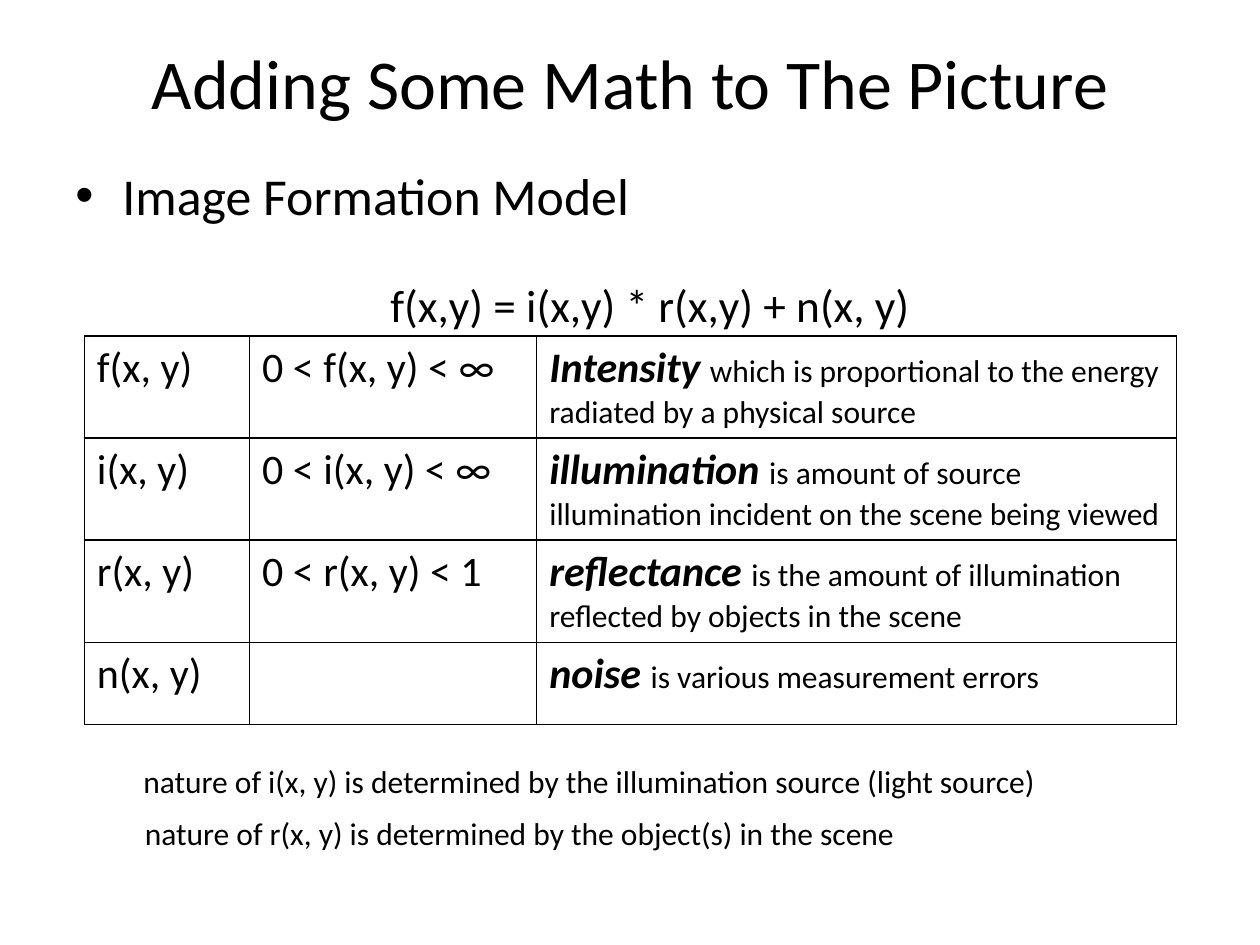
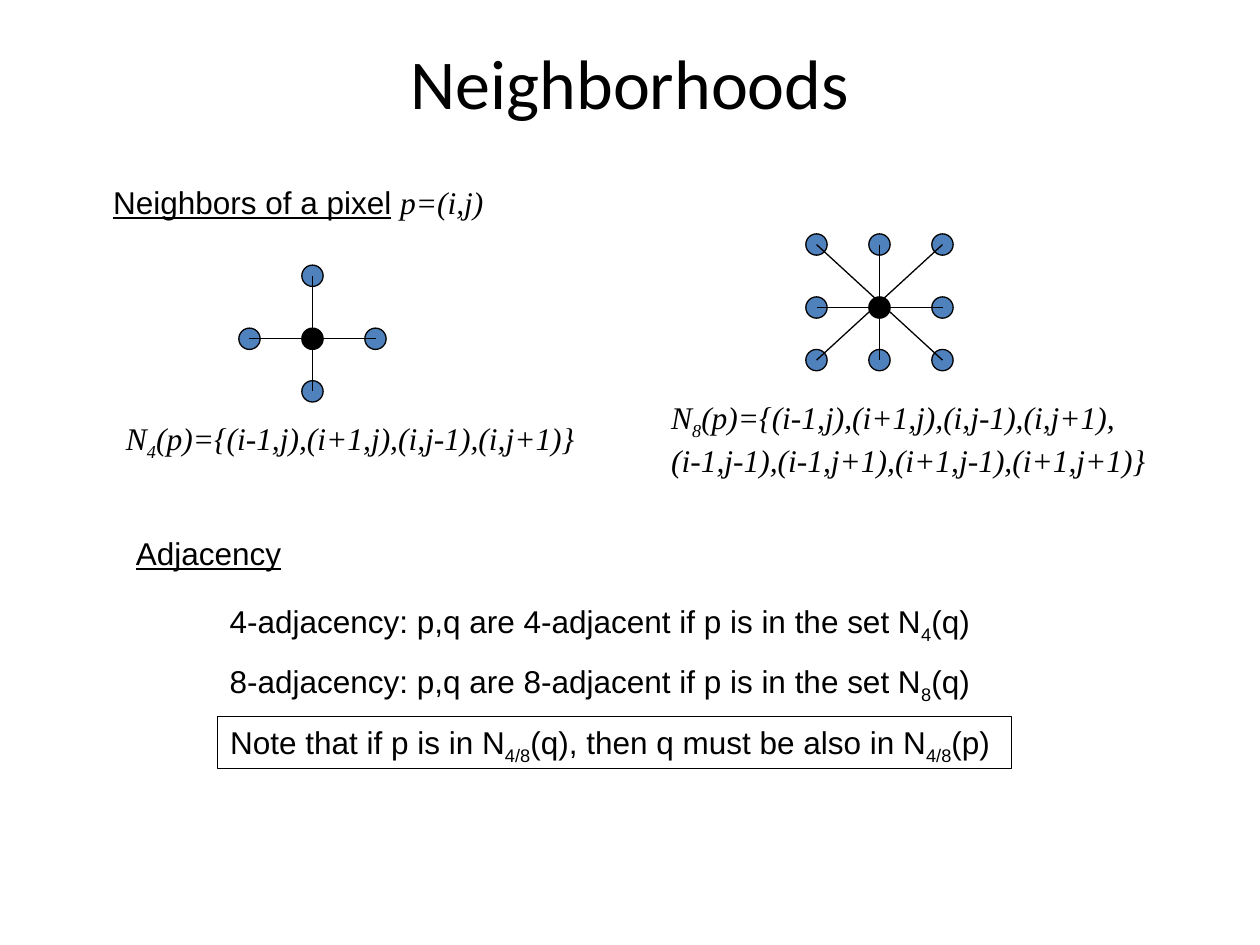
from dataclasses import dataclass

from lxml import etree
from pptx import Presentation
from pptx.dml.color import RGBColor
from pptx.enum.shapes import MSO_CONNECTOR, MSO_SHAPE
from pptx.enum.text import MSO_ANCHOR, MSO_AUTO_SIZE, PP_ALIGN
from pptx.oxml.ns import qn
from pptx.util import Cm, Pt

CENTER, LEFT = PP_ALIGN.CENTER, PP_ALIGN.LEFT
MIDDLE, TOP = MSO_ANCHOR.MIDDLE, MSO_ANCHOR.TOP
GROW, FIXED = MSO_AUTO_SIZE.SHAPE_TO_FIT_TEXT, MSO_AUTO_SIZE.NONE
OVAL, RECTANGLE = MSO_SHAPE.OVAL, MSO_SHAPE.RECTANGLE
STRAIGHT = MSO_CONNECTOR.STRAIGHT


@dataclass(frozen=True)
class Theme:
    ink: str = "000000"
    node: str = "4F81BD"
    body_font: str = "Calibri"
    label_font: str = "Arial"
    math_font: str = "Times New Roman"
    title: float = 40
    bullet: float = 29.6
    formula: float = 25.9
    cell: float = 24
    text: float = 18
    line: float = 0.75
    border: float = 1


THEME = Theme()
SUB = {"sub": True}
STRONG = {"size": THEME.cell, "bold": True, "italic": True}
LABEL = {"font": THEME.label_font}
MATH = {"font": THEME.math_font, "italic": True}


# Shared helpers
def add_text(p, text, font=THEME.body_font, size=THEME.text, color=THEME.ink,
             bold=False, italic=False, underline=False, sub=False):
    r = p.add_run()
    r.text = text
    f = r.font
    f.name, f.size = font, Pt(size)
    f.bold, f.italic, f.underline = bold, italic, underline
    f.color.rgb = RGBColor.from_string(color)
    if sub:
        r._r.get_or_add_rPr().set("baseline", "-25000")


def fill_text(tf, *paragraphs, **fmt):
    """Each paragraph is a list of plain strings or (string, format) pairs."""
    for n, runs in enumerate(paragraphs):
        p = tf.add_paragraph() if n else tf.paragraphs[0]
        p.alignment = LEFT
        for run in runs:
            text, extra = (run, {}) if isinstance(run, str) else run
            add_text(p, text, **{**fmt, **extra})


def add_label(slide, box, *paragraphs, **fmt):
    tf = slide.shapes.add_textbox(*map(Cm, box)).text_frame
    tf.word_wrap, tf.auto_size = False, GROW
    fill_text(tf, *paragraphs, **fmt)


def style_line(line):
    line.color.rgb = RGBColor.from_string(THEME.ink)
    line.width = Pt(THEME.line)


def add_line(slide, start, end):
    line = slide.shapes.add_connector(STRAIGHT, *map(Cm, (*start, *end)))
    style_line(line.line)
    etree.SubElement(line._element.spPr, qn("a:effectLst"))


def add_titled_slide(prs, title):
    slide = prs.slides.add_slide(prs.slide_layouts[5])
    sp = slide.shapes.title
    sp.left, sp.top, sp.width, sp.height = map(Cm, (1.27, 0.76, 22.86, 1.78))
    tf = sp.text_frame
    tf.vertical_anchor, tf.auto_size = MIDDLE, FIXED
    fill_text(tf, [title], size=THEME.title)
    tf.paragraphs[0].alignment = CENTER
    return slide


# Image formation model
def add_model(slide, box):
    tf = slide.shapes.add_textbox(*map(Cm, box)).text_frame
    tf.word_wrap = True
    fill_text(tf, [("Image Formation Model", {"size": THEME.bullet})],
              ["f(x,y) = i(x,y) * r(x,y) + n(x, y)"], size=THEME.formula)
    heading, formula = tf.paragraphs
    pPr = heading._p.get_or_add_pPr()
    pPr.set("marL", str(Cm(0.95)))
    pPr.set("indent", str(-Cm(0.95)))
    etree.SubElement(pPr, qn("a:buFont"), typeface=THEME.label_font)
    etree.SubElement(pPr, qn("a:buChar"), char="•")
    formula.space_before = Pt(29)
    formula._p.get_or_add_pPr().set("marL", str(Cm(6.35)))


def add_borders(cell):
    tcPr = cell._tc.get_or_add_tcPr()
    for side in ("lnL", "lnR", "lnT", "lnB"):
        ln = etree.SubElement(tcPr, qn(f"a:{side}"), w=str(Pt(THEME.border)))
        fill = etree.SubElement(ln, qn("a:solidFill"))
        etree.SubElement(fill, qn("a:srgbClr"), val=THEME.ink)


def add_term_table(slide, left, top):
    rows = [
        ("f(x, y)", "0 < f(x, y) < ∞", "Intensity ",
         "which is proportional to the energy radiated by a physical source"),
        ("i(x, y)", "0 < i(x, y) < ∞", "illumination ",
         "is amount of source illumination incident on the scene being viewed"),
        ("r(x, y)", "0 < r(x, y) < 1", "reflectance ",
         "is the amount of illumination reflected by objects in the scene"),
        ("n(x, y)", "", "noise ", "is various measurement errors"),
    ]
    widths, heights = (3.33, 5.79, 12.9), (2.06, 2.06, 2.06, 1.65)
    table = slide.shapes.add_table(
        len(rows), len(widths), Cm(left), Cm(top),
        Cm(sum(widths)), Cm(sum(heights))).table
    table.first_row = table.horz_banding = False
    for column, width in zip(table.columns, widths):
        column.width = Cm(width)
    for row, height, (term, limits, name, meaning) in zip(
            table.rows, heights, rows):
        row.height = Cm(height)
        contents = ([term], [limits] if limits else [],
                    [(name, STRONG), (meaning, {"size": THEME.text})])
        for cell, runs in zip(row.cells, contents):
            fill_text(cell.text_frame, runs, size=THEME.cell)
            add_borders(cell)
            cell.fill.background()


def build_math_slide(prs):
    slide = add_titled_slide(prs, "Adding Some Math to The Picture")
    add_model(slide, (1.27, 3.18, 22.86, 3.38))
    add_term_table(slide, 1.7, 6.77)
    add_label(slide, (2.64, 15.24, 18.87, 1.02),
              ["nature of i(x, y) is determined by the illumination source (light source)"])
    add_label(slide, (2.67, 16.28, 15.98, 1.02),
              ["nature of r(x, y) is determined by the object(s) in the scene"])


# Pixel neighborhoods
def add_node(slide, x, y, color):
    size = 0.43
    sp = slide.shapes.add_shape(
        OVAL, Cm(x - size / 2), Cm(y - size / 2), Cm(size), Cm(size))
    sp.shadow.inherit = False
    sp.fill.solid()
    sp.fill.fore_color.rgb = RGBColor.from_string(color)
    style_line(sp.line)


def add_neighborhood(slide, x, y, diagonals=False):
    reach, below = 1.27, 1.06
    sides = [(-1, 0), (0, -1), (1, 0), (0, 1)]
    corners = [(-1, -1), (-1, 1), (1, -1), (1, 1)] if diagonals else []

    def spot(dx, dy):
        return x + dx * reach, y + dy * (below if dy > 0 else reach)

    add_node(slide, x, y, THEME.ink)
    for step in sides + corners:
        add_node(slide, *spot(*step), THEME.node)
    for dx, dy in sides:
        end_x, end_y = spot(dx, dy)
        add_line(slide, (end_x - dx * reach, end_y - dy * reach), (end_x, end_y))
    for dx, dy in corners[:2]:
        add_line(slide, spot(dx, dy), spot(-dx, -dy))


def add_adjacency(slide, left, top):
    add_label(slide, (left, top, 3.43, 1.02),
              [("Adjacency", {"underline": True})], **LABEL)
    for n, count in enumerate("48"):
        add_label(slide, (left + 1.89, top + 1.37 + n * 1.22, 15.47, 1.02),
                  [f"{count}-adjacency: p,q are {count}-adjacent if p is in the set N",
                   (count, SUB), "(q)"], **LABEL)

    # Framed note
    note = slide.shapes.add_shape(
        RECTANGLE, Cm(left + 1.9), Cm(top + 3.81), Cm(16), Cm(1.04))
    note.shadow.inherit = False
    note.fill.background()
    style_line(note.line)
    tf = note.text_frame
    tf.word_wrap, tf.auto_size, tf.vertical_anchor = False, GROW, TOP
    fill_text(tf, ["Note that if p is in N", ("4/8", SUB),
                   "(q), then q must be also in N", ("4/8", SUB), "(p)"], **LABEL)


def build_neighborhood_slide(prs):
    slide = add_titled_slide(prs, "Neighborhoods")
    add_label(slide, (2.03, 3.56, 7.98, 1.02),
              [("Neighbors of a pixel", {"underline": True}), " ",
               ("p=(i,j)", MATH)], **LABEL)
    add_neighborhood(slide, 6.3, 6.83)
    add_neighborhood(slide, 17.73, 6.2, diagonals=True)
    add_label(slide, (2.29, 8.33, 9.6, 1.02),
              ["N", ("4", SUB), "(p)={(i-1,j),(i+1,j),(i,j-1),(i,j+1)}"], **MATH)
    add_label(slide, (13.28, 7.9, 10.08, 1.78),
              ["N", ("8", SUB), "(p)={(i-1,j),(i+1,j),(i,j-1),(i,j+1),"],
              ["(i-1,j-1),(i-1,j+1),(i+1,j-1),(i+1,j+1)}"], **MATH)
    add_adjacency(slide, 2.49, 10.64)


def main():
    prs = Presentation()
    prs.slide_width, prs.slide_height = Cm(25.4), Cm(19.05)
    build_math_slide(prs)
    build_neighborhood_slide(prs)
    prs.save("out.pptx")


if __name__ == "__main__":
    main()
